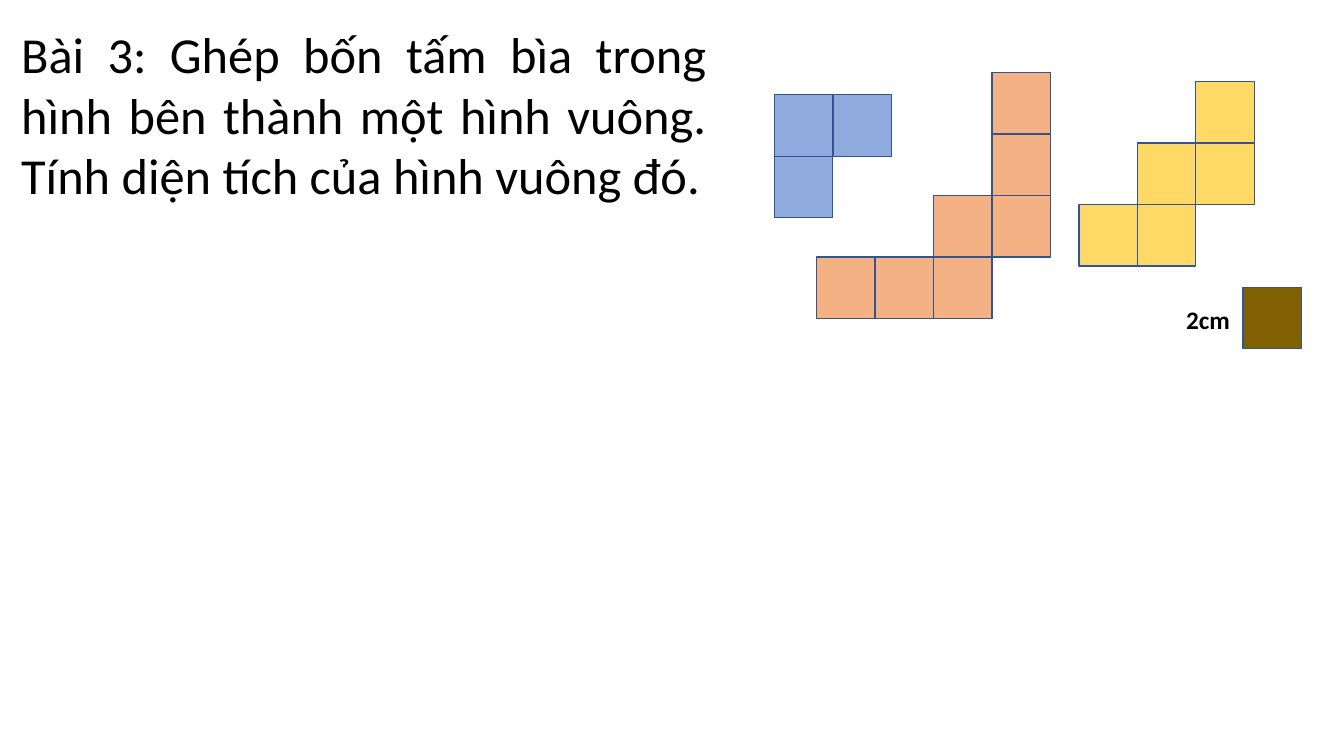
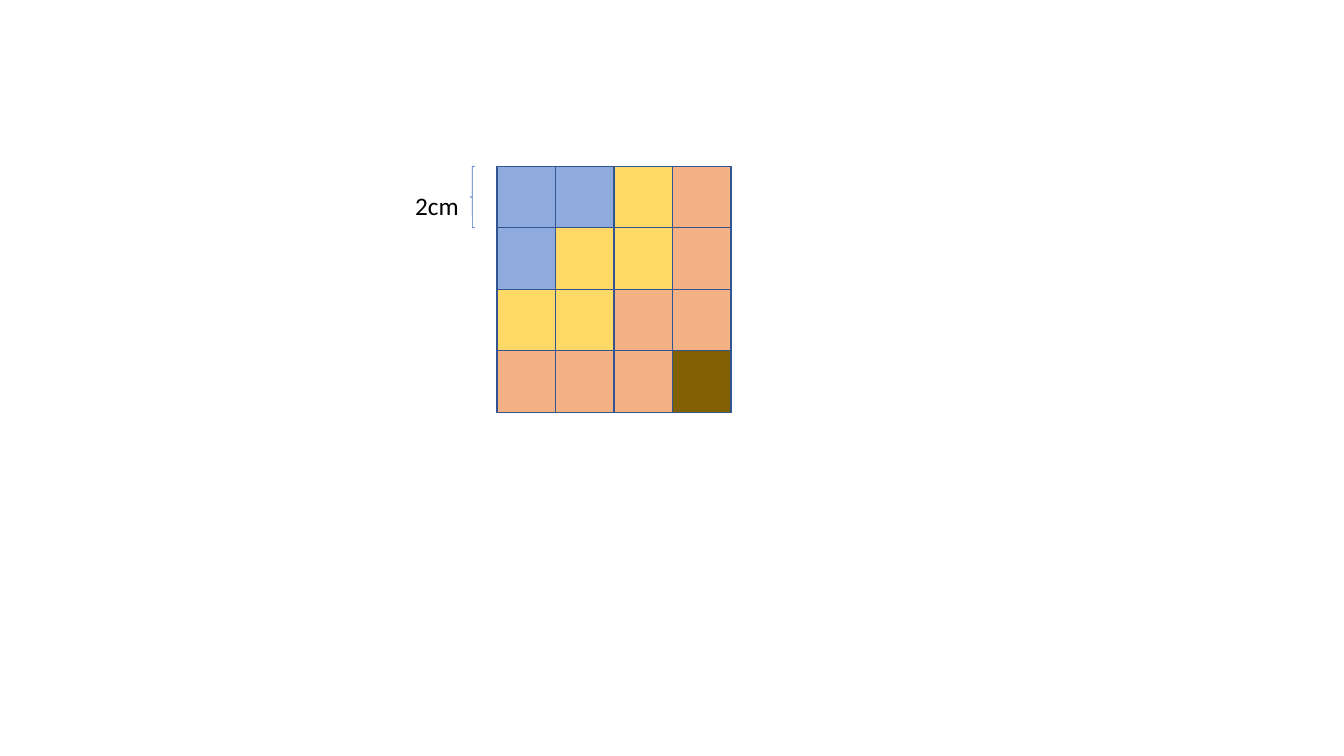
from pptx import Presentation
from pptx.dml.color import RGBColor
from pptx.enum.shapes import MSO_SHAPE
from pptx.enum.text import MSO_ANCHOR, MSO_AUTO_SIZE, PP_ALIGN
from pptx.util import Inches, Pt

COLORS = {
    "blue": "8FAADC",
    "orange": "F4B183",
    "yellow": "FFD966",
    "brown": "806000",
    "outline": "325491",
    "brace": "4472C4",
    "text": "000000",
}
FONT = "Calibri"
CELL_WIDTH, CELL_HEIGHT = 0.58, 0.61

# Each piece lists its cells as (column, row)
PIECES = {
    "orange": [(3, 0), (3, 1), (3, 2), (2, 2), (2, 3), (1, 3), (0, 3)],
    "yellow": [(2, 0), (1, 1), (2, 1), (0, 2), (1, 2)],
    "blue": [(0, 0), (0, 1), (1, 0)],
    "brown": [(0, 0)],
}

# Top left corner of each loose piece, and of the assembled square
LOOSE_ORIGINS = {
    "blue": (7.68, 0.94),
    "orange": (8.1, 0.72),
    "yellow": (10.7, 0.81),
    "brown": (12.33, 2.85),
}
SQUARE_LEFT, SQUARE_TOP = 4.93, 1.65


def color(name):
    return RGBColor.from_string(COLORS[name])


def add_outlined_shape(slide, kind, box, line_color, line_width):
    shape = slide.shapes.add_shape(kind, *map(Inches, box))
    shape.shadow.inherit = False
    shape.line.color.rgb = color(line_color)
    shape.line.width = Pt(line_width)
    return shape


def add_piece(slide, name, left, top):
    for column, row in PIECES[name]:
        box = (left + column * CELL_WIDTH, top + row * CELL_HEIGHT,
               CELL_WIDTH, CELL_HEIGHT)
        cell = add_outlined_shape(slide, MSO_SHAPE.RECTANGLE, box, "outline", 1)
        cell.fill.solid()
        cell.fill.fore_color.rgb = color(name)


def add_brace(slide, box):
    brace = add_outlined_shape(slide, MSO_SHAPE.LEFT_BRACE, box, "brace", 0.5)
    brace.fill.background()


def set_text(shape, text, size, alignment, bold=False):
    frame = shape.text_frame
    frame_format = {
        "text": text,
        "word_wrap": True,
        "auto_size": MSO_AUTO_SIZE.NONE,
        "vertical_anchor": MSO_ANCHOR.TOP,
    }
    for attribute, value in frame_format.items():
        setattr(frame, attribute, value)
    paragraph = frame.paragraphs[0]
    paragraph.alignment = alignment
    font = paragraph.runs[0].font
    font_format = {"name": FONT, "size": Pt(size), "bold": bold}
    for attribute, value in font_format.items():
        setattr(font, attribute, value)
    font.color.rgb = color("text")


def add_title(slide, text, box):
    title = slide.shapes.title
    title.left, title.top, title.width, title.height = map(Inches, box)
    set_text(title, text, 36, PP_ALIGN.JUSTIFY)


def add_label(slide, text, box, alignment, bold=False):
    label = slide.shapes.add_textbox(*map(Inches, box))
    set_text(label, text, 18, alignment, bold)


def build_problem(presentation):
    slide = presentation.slides.add_slide(
        presentation.slide_layouts.get_by_name("Title Only"))
    add_title(slide, "Bài 3: Ghép bốn tấm bìa trong hình bên thành một hình "
              "vuông. Tính diện tích của hình vuông đó.", (0.11, 0.18, 7, 1.92))
    for name, (left, top) in LOOSE_ORIGINS.items():
        add_piece(slide, name, left, top)
    add_label(slide, "2cm", (11.49, 2.97, 0.98, 0.4), PP_ALIGN.CENTER, bold=True)


def build_solution(presentation):
    slide = presentation.slides.add_slide(
        presentation.slide_layouts.get_by_name("Blank"))
    # The three large pieces share one corner; the brown cell fills the last gap
    for name in ("orange", "yellow", "blue"):
        add_piece(slide, name, SQUARE_LEFT, SQUARE_TOP)
    add_piece(slide, "brown", SQUARE_LEFT + 3 * CELL_WIDTH,
              SQUARE_TOP + 3 * CELL_HEIGHT)
    # Side length of one cell
    add_brace(slide, (4.66, SQUARE_TOP, 0.05, CELL_HEIGHT))
    add_label(slide, "2cm", (4.02, 1.84, 0.77, 0.4), PP_ALIGN.LEFT)


def main():
    presentation = Presentation()
    presentation.slide_width = Inches(13.33)
    presentation.slide_height = Inches(7.5)
    build_problem(presentation)
    build_solution(presentation)
    presentation.save("out.pptx")


if __name__ == "__main__":
    main()
